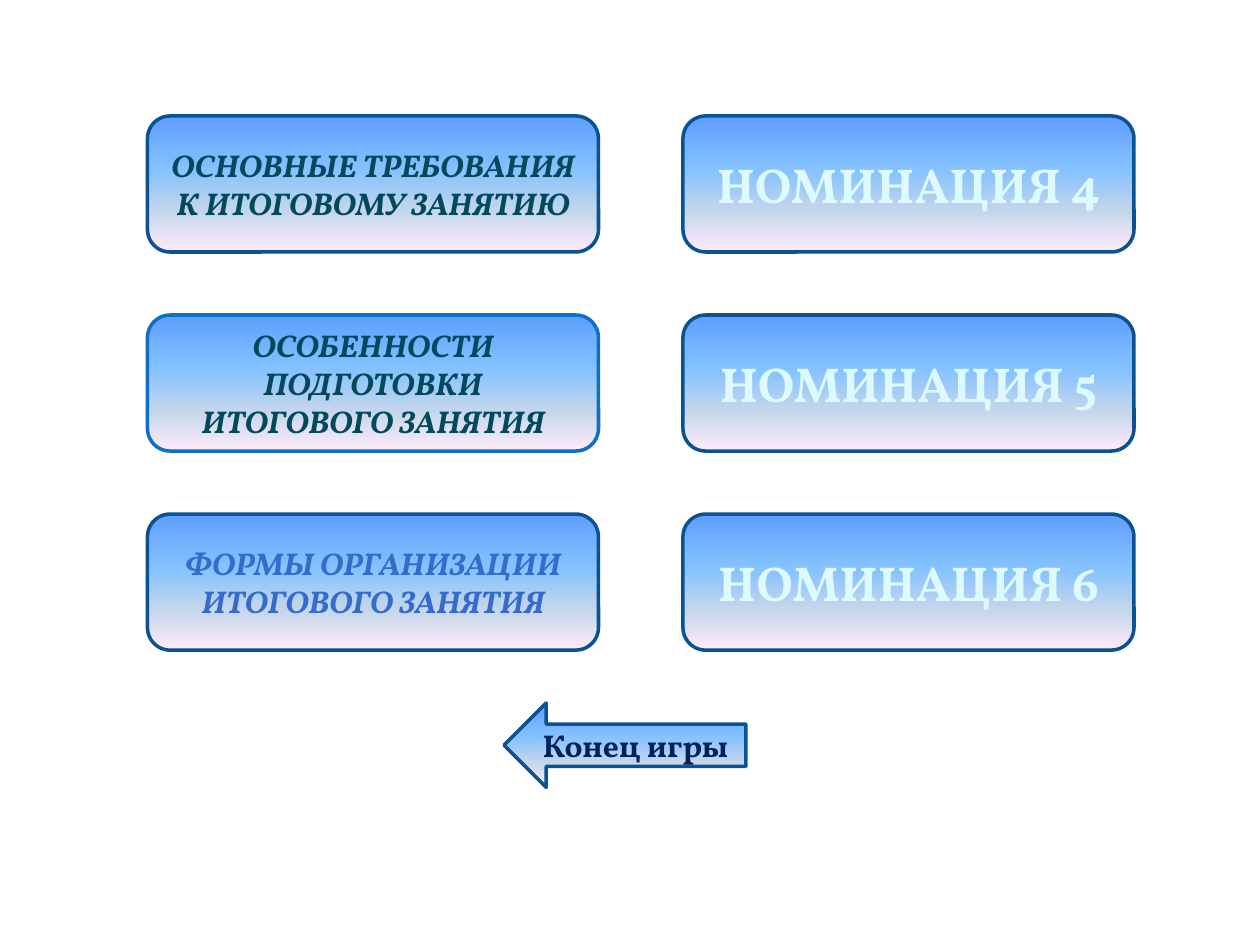
from lxml import etree
from pptx import Presentation
from pptx.dml.color import RGBColor
from pptx.enum.shapes import MSO_SHAPE as Shape
from pptx.enum.text import MSO_ANCHOR as Anchor, PP_ALIGN as Align
from pptx.oxml.ns import qn
from pptx.util import Inches, Pt

FONT = "Vollkorn"
DARK_BLUE = RGBColor(0x0B, 0x52, 0x92)
BRIGHT_BLUE = RGBColor(0x0F, 0x6F, 0xC6)
TEAL = RGBColor(0x03, 0x49, 0x5C)
PALE_CYAN = RGBColor(0xDC, 0xFA, 0xFF)
CYAN_OUTLINE = RGBColor(0x00, 0x63, 0x7F)
BLUE_OUTLINE = RGBColor(0x00, 0x70, 0xC0)
NAVY = RGBColor(0x00, 0x20, 0x60)

# Gradient stops: percent and colour
SKY = [
    (0, RGBColor(0x5E, 0x9E, 0xFF)),
    (40, RGBColor(0x85, 0xC2, 0xFF)),
    (70, RGBColor(0xC4, 0xD6, 0xEB)),
    (100, RGBColor(0xFF, 0xEB, 0xFA)),
]
BLUE_TEXT = [
    (0, RGBColor(0x64, 0x88, 0xD4)),
    (49, RGBColor(0x35, 0x6B, 0xCA)),
    (50, RGBColor(0x00, 0x5D, 0xB1)),
    (92, RGBColor(0x00, 0x53, 0x9E)),
    (100, RGBColor(0x00, 0x51, 0x9B)),
]

BUTTON_SIZE = (3.58, 1.08)
COLUMNS = (1.17, 5.42)
FIRST_TOP, ROW_STEP = 0.92, 1.58


def add_color(parent, color):
    etree.SubElement(parent, qn("a:srgbClr"), val=str(color))


def vertical_gradient(stops):
    gradient = etree.Element(qn("a:gradFill"), rotWithShape="1")
    stop_list = etree.SubElement(gradient, qn("a:gsLst"))
    for percent, color in stops:
        add_color(etree.SubElement(stop_list, qn("a:gs"), pos=str(percent * 1000)), color)
    etree.SubElement(gradient, qn("a:lin"), ang="5400000", scaled="0")
    return gradient


def outline_text(run, color, width):
    line = etree.Element(qn("a:ln"), w=str(Pt(width)))
    add_color(etree.SubElement(line, qn("a:solidFill")), color)
    run.font._element.insert(0, line)


def add_button(slide, kind, left, top, size, lines, font_size, color=None,
               italic=False, border=DARK_BLUE, text_stops=None, outline=None):
    shape = slide.shapes.add_shape(
        kind, Inches(left), Inches(top), *(Inches(side) for side in size))
    shape.shadow.inherit = False
    shape._element.spPr.insert(2, vertical_gradient(SKY))
    shape.line.color.rgb = border
    shape.line.width = Pt(2)

    frame = shape.text_frame
    frame.word_wrap = True
    frame.vertical_anchor = Anchor.MIDDLE
    for index, text in enumerate(lines):
        paragraph = frame.add_paragraph() if index else frame.paragraphs[0]
        paragraph.alignment = Align.CENTER
        font = paragraph.font
        font.name, font.size = FONT, Pt(font_size)
        font.bold, font.italic = True, italic
        run = paragraph.add_run()
        run.text = text
        if text_stops:
            run.font._element.insert(0, vertical_gradient(text_stops))
        else:
            font.color.rgb = color
        if outline:
            outline_text(run, *outline)


def main():
    presentation = Presentation()
    presentation.slide_width, presentation.slide_height = Inches(10), Inches(7.5)
    slide = presentation.slides.add_slide(presentation.slide_layouts[6])

    # Topics on the left, numbered nominations on the right
    topics = [
        (["ОСНОВНЫЕ ТРЕБОВАНИЯ К ИТОГОВОМУ ЗАНЯТИЮ"], {"color": TEAL}),
        (["ОСОБЕННОСТИ ПОДГОТОВКИ", "ИТОГОВОГО ЗАНЯТИЯ"],
         {"color": TEAL, "border": BRIGHT_BLUE}),
        (["ФОРМЫ ОРГАНИЗАЦИИ ИТОГОВОГО ЗАНЯТИЯ"],
         {"text_stops": BLUE_TEXT, "outline": (BLUE_OUTLINE, 0)}),
    ]
    for row, (lines, style) in enumerate(topics):
        top = FIRST_TOP + row * ROW_STEP
        add_button(slide, Shape.ROUNDED_RECTANGLE, COLUMNS[0], top, BUTTON_SIZE,
                   lines, 18, italic=True, **style)
        add_button(slide, Shape.ROUNDED_RECTANGLE, COLUMNS[1], top, BUTTON_SIZE,
                   [f"НОМИНАЦИЯ {row + 4}"], 28, PALE_CYAN, outline=(CYAN_OUTLINE, 1))

    # Arrow that ends the game
    add_button(slide, Shape.LEFT_ARROW, 4, 5.58, (1.92, 0.67), ["Конец игры"], 18, NAVY)

    presentation.save("out.pptx")


if __name__ == "__main__":
    main()
